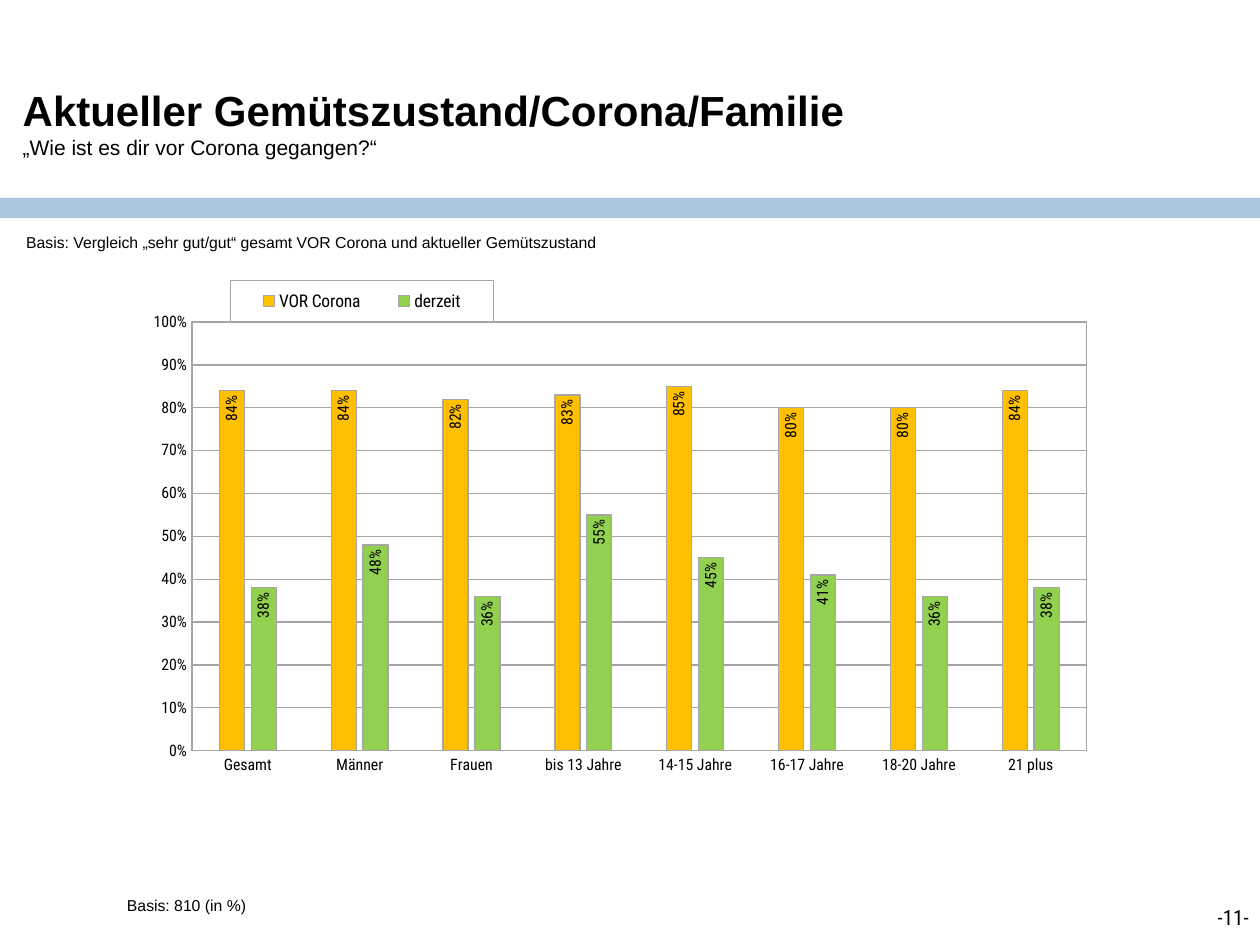
from lxml import etree
from pptx import Presentation
from pptx.chart.data import CategoryChartData
from pptx.dml.color import RGBColor
from pptx.enum import chart as ch, shapes, text
from pptx.oxml import parse_xml
from pptx.oxml.ns import nsdecls, qn
from pptx.util import Inches, Pt

COLORS = {"text": "000000", "band": "92B5D5", "line": "A6A6A6",
          "before": "FFC000", "now": "92D050"}
BODY, CHART_FONT = "Arial", "Roboto Condensed"


def set_font(font, size, name=BODY, bold=False):
    font.size, font.name, font.bold = Pt(size), name, bold
    font.color.rgb = RGBColor.from_string(COLORS["text"])


def set_layout(parent, index, box, inner=False):
    """Place a chart part by fractions (x, y, w, h) of the chart."""
    for old in parent.findall(qn("c:layout")):
        parent.remove(old)
    layout = parse_xml(f"<c:layout {nsdecls('c')}><c:manualLayout/></c:layout>")
    tags = [("layoutTarget", "inner")] if inner else []
    tags += [("xMode", "edge"), ("yMode", "edge"), *zip("xywh", box)]
    for tag, val in tags:
        etree.SubElement(layout[0], qn("c:" + tag)).set("val", str(val))
    parent.insert(index, layout)


prs = Presentation()
prs.slide_width, prs.slide_height = Inches(10), Inches(7.5)
s = prs.slides.add_slide(prs.slide_layouts[5])

# Band below the title
band = s.shapes.add_shape(shapes.MSO_SHAPE.RECTANGLE, 0, Inches(1.57), Inches(10), Inches(0.16))
band.shadow.inherit = False
band.line.fill.background()
band.fill.solid()
band.fill.fore_color.rgb = RGBColor.from_string(COLORS["band"])
color = band.fill._xPr.find(".//" + qn("a:srgbClr"))
etree.SubElement(color, qn("a:alpha")).set("val", "79000")

# Title and question
title = s.shapes.title
title.left, title.top, title.width, title.height = (Inches(v) for v in (0.08, 0.32, 9.33, 1.3))
tf = title.text_frame
tf.word_wrap = True
tf.auto_size = text.MSO_AUTO_SIZE.NONE
tf.vertical_anchor = text.MSO_ANCHOR.MIDDLE
p = tf.paragraphs[0]
p.alignment = text.PP_ALIGN.LEFT
r = p.add_run()
r.text = "Aktueller Gemütszustand/Corona/Familie"
set_font(r.font, 24, bold=True)
p.add_line_break()
r = p.add_run()
r.text = "„Wie ist es dir vor Corona gegangen?“"
set_font(r.font, 12)

# Notes on the base and page number
for words, box, size, font, align in [
    ("Basis: Vergleich „sehr gut/gut“ gesamt VOR Corona und aktueller Gemütszustand",
     (0.11, 1.8, 4.77, 0.25), 9, BODY, text.PP_ALIGN.LEFT),
    ("Basis: 810 (in %)", (0.91, 7.06, 1.16, 0.25), 9, BODY, text.PP_ALIGN.LEFT),
    ("-11-", (7.68, 7.13, 2.33, 0.37), 12, CHART_FONT, text.PP_ALIGN.RIGHT),
]:
    tf = s.shapes.add_textbox(*(Inches(v) for v in box)).text_frame
    tf.word_wrap = align == text.PP_ALIGN.RIGHT
    p = tf.paragraphs[0]
    p.text, p.alignment = words, align
    set_font(p.font, size, font)

# Chart
data = CategoryChartData(number_format="0%")
data.categories = ["Gesamt", "Männer", "Frauen", "bis 13 Jahre", "14-15 Jahre",
                   "16-17 Jahre", "18-20 Jahre", "21 plus"]
data.add_series("VOR Corona", (0.84, 0.84, 0.82, 0.83, 0.85, 0.8, 0.8, 0.84))
data.add_series("derzeit", (0.38, 0.48, 0.36, 0.55, 0.45, 0.41, 0.36, 0.38))
chart = s.shapes.add_chart(ch.XL_CHART_TYPE.COLUMN_CLUSTERED, Inches(1.06), Inches(2.1),
                           Inches(7.72), Inches(4.15), data).chart
chart.has_title = False
set_font(chart.font, 10, CHART_FONT)

plot = chart.plots[0]
plot.gap_width, plot.overlap, plot.vary_by_categories = 219, -27, False
lines = []
for series, name in zip(plot.series, ("before", "now")):
    series.format.fill.solid()
    series.format.fill.fore_color.rgb = RGBColor.from_string(COLORS[name])
    lines.append(series.format.line)
    labels = series.data_labels
    labels.show_value = True
    labels.position = ch.XL_LABEL_POSITION.INSIDE_END
    labels.number_format, labels.number_format_is_linked = "0%", False
    set_font(labels.font, 9, CHART_FONT)
    body = labels._element.find(".//" + qn("a:bodyPr"))
    body.set("rot", "-5400000")
    body.set("vert", "horz")

for axis in (chart.category_axis, chart.value_axis):
    axis.major_tick_mark = axis.minor_tick_mark = ch.XL_TICK_MARK.NONE
    set_font(axis.tick_labels.font, 9, CHART_FONT)
    lines.append(axis.format.line)
axis = chart.value_axis
axis.minimum_scale, axis.maximum_scale, axis.major_unit = 0, 1, 0.1
axis.tick_labels.number_format, axis.tick_labels.number_format_is_linked = "0%", False
axis.has_major_gridlines = True
lines.append(axis.major_gridlines.format.line)
for line in lines:
    line.color.rgb = RGBColor.from_string(COLORS["line"])
    line.width = Pt(0.75)

chart.has_legend = True
legend = chart.legend
legend.position = ch.XL_LEGEND_POSITION.TOP
legend.include_in_layout = False
set_font(legend.font, 10, CHART_FONT)

# Frames and places of the plot area and the legend
area = chart._chartSpace.chart.plotArea
set_layout(area, 0, (0.06, 0.11, 0.92, 0.82), inner=True)
set_layout(legend._element, 1, (0.1, 0.03, 0.27, 0.08))
frame = (f"<c:spPr {nsdecls('c', 'a')}><a:noFill/><a:ln w='9525'><a:solidFill>"
         f"<a:srgbClr val='{COLORS['line']}'/></a:solidFill></a:ln></c:spPr>")
area.append(parse_xml(frame))
legend._element.find(qn("c:overlay")).addnext(parse_xml(frame))

prs.save("out.pptx")
